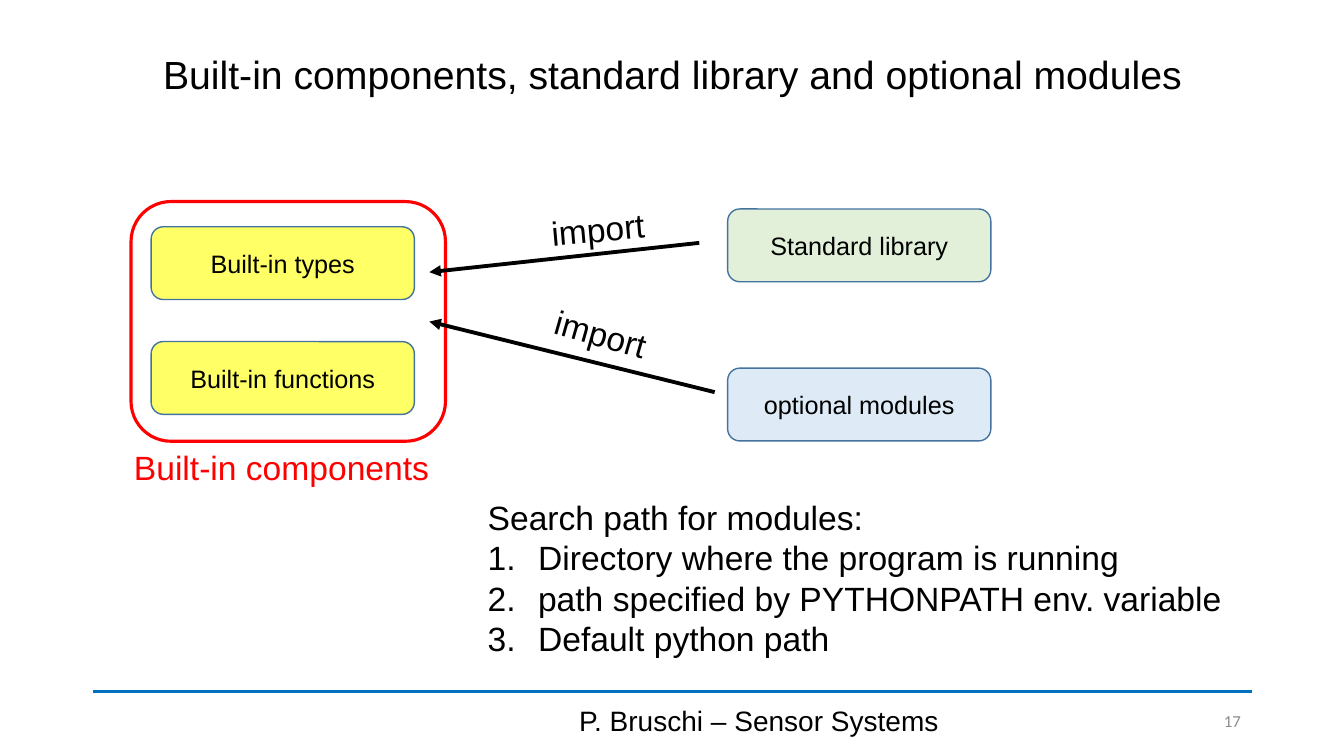
from lxml import etree
from pptx import Presentation
from pptx.dml.color import RGBColor
from pptx.enum.shapes import MSO_CONNECTOR, MSO_SHAPE
from pptx.enum.text import MSO_ANCHOR, PP_ALIGN
from pptx.oxml.ns import qn
from pptx.util import Pt

LEFT, CENTER, RIGHT = PP_ALIGN.LEFT, PP_ALIGN.CENTER, PP_ALIGN.RIGHT
TOP, MIDDLE = MSO_ANCHOR.TOP, MSO_ANCHOR.MIDDLE
ROUNDED, STRAIGHT = MSO_SHAPE.ROUNDED_RECTANGLE, MSO_CONNECTOR.STRAIGHT

COLORS = {
    "black": "000000", "gray": "8C8C8C", "red": "FF0000", "rule": "0070C0",
    "border": "43739E", "yellow": "FFFF66", "green": "E2F0D9", "blue": "DEEBF7",
}

# Content: text, position and format
TITLE = "Built-in components, standard library and optional modules"
FOOTER = "P. Bruschi – Sensor Systems"
PAGE = "17"
GROUP = "Built-in components"
BUILT_IN_X, MODULE_X = 108, 519.8
BOX_W, BOX_H = 188, 52
BOXES = [  # text, left, top, fill
    ("Built-in functions", BUILT_IN_X, 244, "yellow"),
    ("Built-in types", BUILT_IN_X, 162, "yellow"),
    ("Standard library", MODULE_X, 149.3, "green"),
    ("optional modules", MODULE_X, 263, "blue"),
]
ARROW_TIP_X = 306.7
IMPORTS = [  # arrow start, tip height, label left and top, rotation
    ((499.5, 173.5), 194.4, (386.6, 145.5), 355),
    ((510.5, 280.1), 229.7, (388.8, 220.3), 16),
]
SEARCH_HEAD = "Search path for modules:"
SEARCH_PATHS = [
    "Directory where the program is running",
    "path specified by PYTHONPATH env. variable",
    "Default python path",
]

prs = Presentation()
prs.slide_width, prs.slide_height = Pt(960), Pt(540)
s = prs.slides.add_slide(prs.slide_layouts[6])


def rgb(name):
    return RGBColor.from_string(COLORS[name])


def write(sp, lines, size=24, font="Arial", color="black", align=LEFT,
          anchor=TOP, wrap=True, spacing=None):
    tf = sp.text_frame
    tf.word_wrap, tf.vertical_anchor = wrap, anchor
    for i, text in enumerate(lines):
        p = tf.add_paragraph() if i else tf.paragraphs[0]
        p.alignment = align
        if spacing:
            p.line_spacing = spacing
        r = p.add_run()
        r.text = text
        r.font.size, r.font.name = Pt(size), font
        r.font.color.rgb = rgb(color)
    return tf


def add_text(x, y, w, h, *lines, **fmt):
    sp = s.shapes.add_textbox(Pt(x), Pt(y), Pt(w), Pt(h))
    write(sp, lines, **fmt)
    return sp


def add_box(x, y, w, h, line, width, fill=None):
    sp = s.shapes.add_shape(ROUNDED, Pt(x), Pt(y), Pt(w), Pt(h))
    sp.shadow.inherit = False
    if fill:
        sp.fill.solid()
        sp.fill.fore_color.rgb = rgb(fill)
    else:
        sp.fill.background()
    sp.line.color.rgb, sp.line.width = rgb(line), Pt(width)
    return sp


def add_line(start, end, color, arrow=False):
    c = s.shapes.add_connector(STRAIGHT, *map(Pt, start + end))
    c.line.color.rgb, c.line.width = rgb(color), Pt(2.75)
    if arrow:
        etree.SubElement(c.line._get_or_add_ln(), qn("a:tailEnd"), type="triangle")
    etree.SubElement(c._element.spPr, qn("a:effectLst"))


# Title and footer
add_line((66.2, 493.9), (894.2, 493.9), "rule")
add_text(66.2, 28.8, 828, 51.8, TITLE, size=28, align=CENTER, anchor=MIDDLE,
         spacing=0.9)
add_text(318.2, 500.4, 447.8, 28.8, FOOTER, size=20, align=CENTER, anchor=MIDDLE)
add_text(824.4, 500.4, 69.1, 28.8, PAGE, size=12, font="Calibri", color="gray",
         align=RIGHT, anchor=MIDDLE)

# Component boxes and the frame around the built-in ones
for text, x, y, fill in BOXES:
    box = add_box(x, y, BOX_W, BOX_H, "border", 1, fill)
    write(box, [text], size=18, align=CENTER, anchor=MIDDLE)
add_box(93.6, 144, 224.6, 171.2, "red", 2.25)
add_text(88.6, 315.4, 227.5, 36, GROUP, color="red", wrap=False)

# Import arrows with slanted labels
for start, tip_y, (x, y), angle in IMPORTS:
    add_line(start, (ARROW_TIP_X, tip_y), "black", arrow=True)
    add_text(x, y, 82, 36, "import", wrap=False).rotation = angle

# Numbered search path
search = add_text(341.3, 351.4, 544.3, 123.8, SEARCH_HEAD, *SEARCH_PATHS, wrap=False)
for p in search.text_frame.paragraphs[1:]:
    pPr = p._p.get_or_add_pPr()
    pPr.set("marL", str(Pt(36)))
    pPr.set("indent", str(-Pt(36)))
    etree.SubElement(pPr, qn("a:buFont"), typeface="+mj-lt")
    etree.SubElement(pPr, qn("a:buAutoNum"), type="arabicPeriod")

prs.save("out.pptx")
